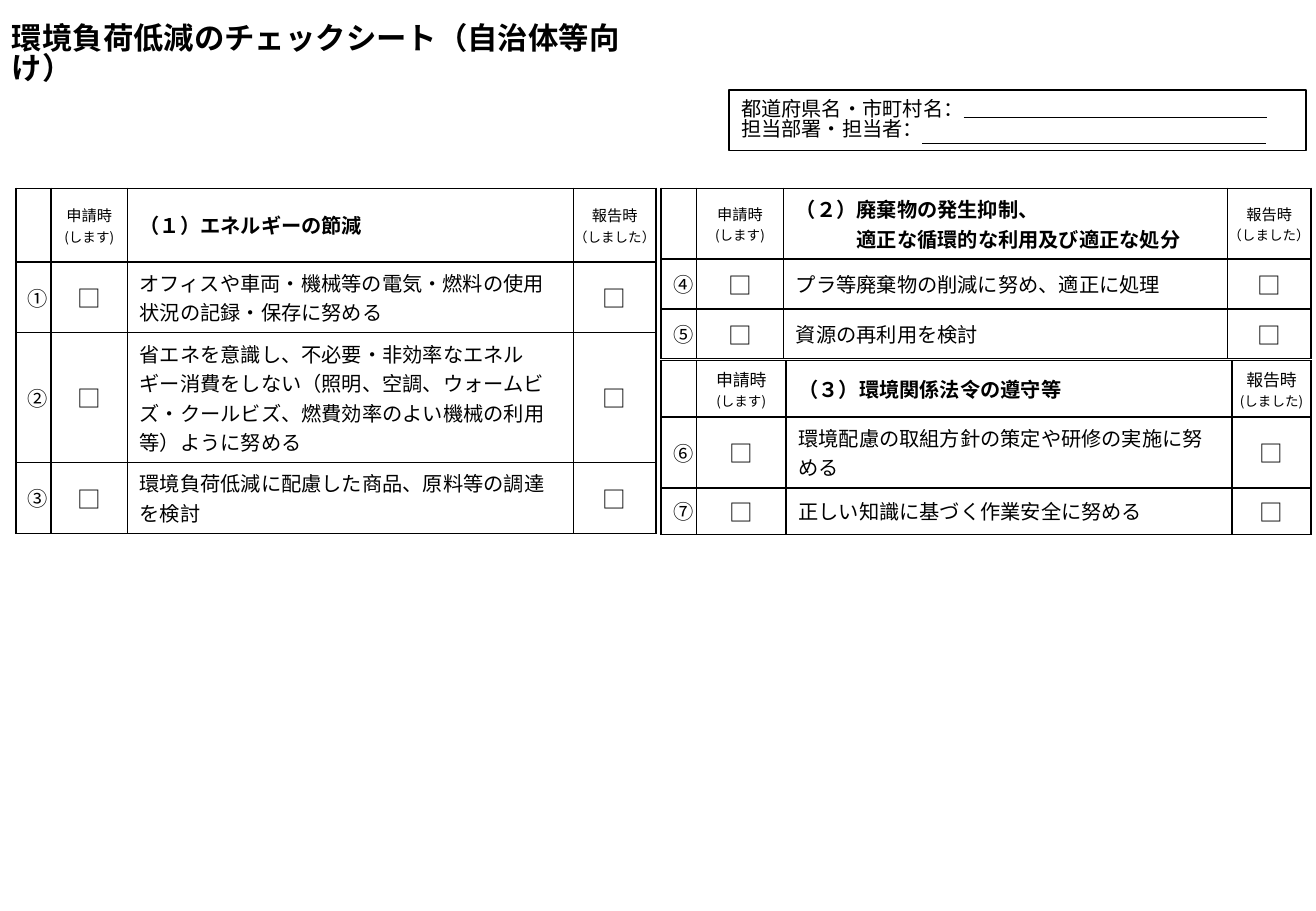
from dataclasses import dataclass

from lxml.etree import SubElement
from pptx import Presentation
from pptx.dml.color import RGBColor
from pptx.enum.shapes import MSO_CONNECTOR, MSO_SHAPE
from pptx.enum.text import MSO_ANCHOR, PP_ALIGN
from pptx.oxml.ns import qn
from pptx.util import Inches, Pt


@dataclass(frozen=True)
class Theme:
    font: str = "Noto Sans CJK JP"
    ink: RGBColor = RGBColor(0, 0, 0)
    paper: RGBColor = RGBColor(255, 255, 255)
    title: int = 18
    body: int = 12
    checkbox: int = 14
    note: int = 8
    border: float = 1


@dataclass(frozen=True)
class Line:
    text: str
    size: int
    bold: bool = False
    centered: bool = False
    indent: float = 0
    spacing: float = 1


@dataclass(frozen=True)
class Checklist:
    left: float
    top: float
    columns: tuple[float, ...]
    rows: tuple[float, ...]
    heading: tuple[str, ...]
    items: tuple[tuple[str, str], ...]
    reported: str = "（しました）"
    label_size: int = 9
    apply_margin: float = 0.1


@dataclass(frozen=True)
class EntryLine:
    left: float
    right: float
    y: float


THEME = Theme()

CHECKLISTS = (
    Checklist(
        5.44, 2.97, (0.29, 0.74, 3.67, 0.65), (0.37, 0.46, 0.37),
        ("（３）環境関係法令の遵守等",),
        (("⑥", "環境配慮の取組方針の策定や研修の実施に努める"),
         ("⑦", "正しい知識に基づく作業安全に努める")),
        reported="(しました)", label_size=10),
    Checklist(
        5.44, 1.55, (0.29, 0.72, 3.65, 0.69), (0.31, 0.41, 0.41),
        ("（２）廃棄物の発生抑制、", "適正な循環的な利用及び適正な処分"),
        (("④", "プラ等廃棄物の削減に努め、適正に処理"),
         ("⑤", "資源の再利用を検討"))),
    Checklist(
        0.13, 1.55, (0.29, 0.63, 3.67, 0.68), (0.31, 0.41, 0.41, 0.41),
        ("（１）エネルギーの節減",),
        (("①", "オフィスや車両・機械等の電気・燃料の使用状況の記録・保存に努める"),
         ("②", "省エネを意識し、不必要・非効率なエネルギー消費をしない（照明、空調、"
               "ウォームビズ・クールビズ、燃費効率のよい機械の利用等）ように努める"),
         ("③", "環境負荷低減に配慮した商品、原料等の調達を検討")),
        apply_margin=0.08),
)

ENTRY_LINES = (EntryLine(7.93, 10.43, 0.97), EntryLine(7.59, 10.42, 1.18))


def write(frame, lines: list[Line]) -> None:
    """Fill a text frame with one paragraph per line."""
    for index, line in enumerate(lines):
        para = frame.paragraphs[0] if index == 0 else frame.add_paragraph()
        para.text = line.text
        para.alignment = PP_ALIGN.CENTER if line.centered else PP_ALIGN.LEFT
        if line.spacing != 1:
            para.line_spacing = line.spacing
        para.font.size = Pt(line.size)
        para.font.bold = line.bold
        para.font.name = THEME.font
        para.font.color.rgb = THEME.ink
        properties = para._p.get_or_add_pPr()
        SubElement(properties.find(qn("a:defRPr")), qn("a:ea"), typeface=THEME.font)
        if line.indent:
            properties.set("marL", str(Inches(line.indent)))
            properties.set("indent", "0")


def style_cell(cell) -> None:
    """Give a cell black borders, no fill and middle anchoring."""
    properties = cell._tc.get_or_add_tcPr()
    for side in ("a:lnL", "a:lnR", "a:lnT", "a:lnB"):
        border = SubElement(properties, qn(side), w=str(Pt(THEME.border)))
        fill = SubElement(border, qn("a:solidFill"))
        SubElement(fill, qn("a:srgbClr"), val=str(THEME.ink))
    cell.fill.background()
    cell.vertical_anchor = MSO_ANCHOR.MIDDLE


def add_checklist(page, checklist: Checklist) -> None:
    frame = page.shapes.add_table(
        len(checklist.rows), len(checklist.columns),
        Inches(checklist.left), Inches(checklist.top),
        Inches(sum(checklist.columns)), Inches(sum(checklist.rows)))
    table = frame.table
    table.first_row = False
    table.horz_banding = False
    for column, width in zip(table.columns, checklist.columns):
        column.width = Inches(width)
    for row, height in zip(table.rows, checklist.rows):
        row.height = Inches(height)
    for cell in table.iter_cells():
        style_cell(cell)

    # Header row
    for column, label, note, margin in (
            (1, "申請時", "(します)", checklist.apply_margin),
            (3, "報告時", checklist.reported, 0)):
        cell = table.cell(0, column)
        cell.margin_left = cell.margin_right = Inches(margin)
        write(cell.text_frame, [Line(label, checklist.label_size, centered=True),
                                Line(note, THEME.note, centered=True)])
    write(table.cell(0, 2).text_frame,
          [Line(text, THEME.body, bold=True, indent=0.5 if index else 0)
           for index, text in enumerate(checklist.heading)])

    # Numbered items with a checkbox on either side
    for row, (number, item) in enumerate(checklist.items, start=1):
        checkbox = Line("□", THEME.checkbox, centered=True)
        lines = (Line(number, THEME.body, centered=True), checkbox,
                 Line(item, THEME.body), checkbox)
        for column, line in enumerate(lines):
            write(table.cell(row, column).text_frame, [line])


def add_title(page) -> None:
    box = page.shapes.add_textbox(Inches(0), Inches(0.16), Inches(5.33), Inches(0.4))
    box.text_frame.word_wrap = True
    write(box.text_frame, [Line("環境負荷低減のチェックシート（自治体等向け）",
                                THEME.title, bold=True, spacing=0.82)])


def add_applicant_box(page) -> None:
    box = page.shapes.add_shape(
        MSO_SHAPE.RECTANGLE, Inches(6), Inches(0.74), Inches(4.75), Inches(0.5))
    box.shadow.inherit = False
    box.fill.solid()
    box.fill.fore_color.rgb = THEME.paper
    box.line.color.rgb = THEME.ink
    box.line.width = Pt(THEME.border)
    box.text_frame.word_wrap = True
    box.text_frame.vertical_anchor = MSO_ANCHOR.MIDDLE
    write(box.text_frame, [Line(text, THEME.body, spacing=0.85) for text in
                           ("都道府県名・市町村名：", "担当部署・担当者：")])


def add_entry_line(page, entry: EntryLine) -> None:
    rule = page.shapes.add_connector(
        MSO_CONNECTOR.STRAIGHT, Inches(entry.left), Inches(entry.y),
        Inches(entry.right), Inches(entry.y))
    rule.line.color.rgb = THEME.ink
    rule.line.width = Pt(0.75)
    SubElement(rule._element.spPr, qn("a:effectLst"))


def main() -> None:
    deck = Presentation()
    deck.slide_width = Inches(10.83)
    deck.slide_height = Inches(7.5)
    page = deck.slides.add_slide(deck.slide_layouts[6])

    # Checklists
    for checklist in CHECKLISTS:
        add_checklist(page, checklist)

    # Title and applicant details
    add_title(page)
    add_applicant_box(page)
    for entry in ENTRY_LINES:
        add_entry_line(page, entry)

    deck.save("out.pptx")


if __name__ == "__main__":
    main()
